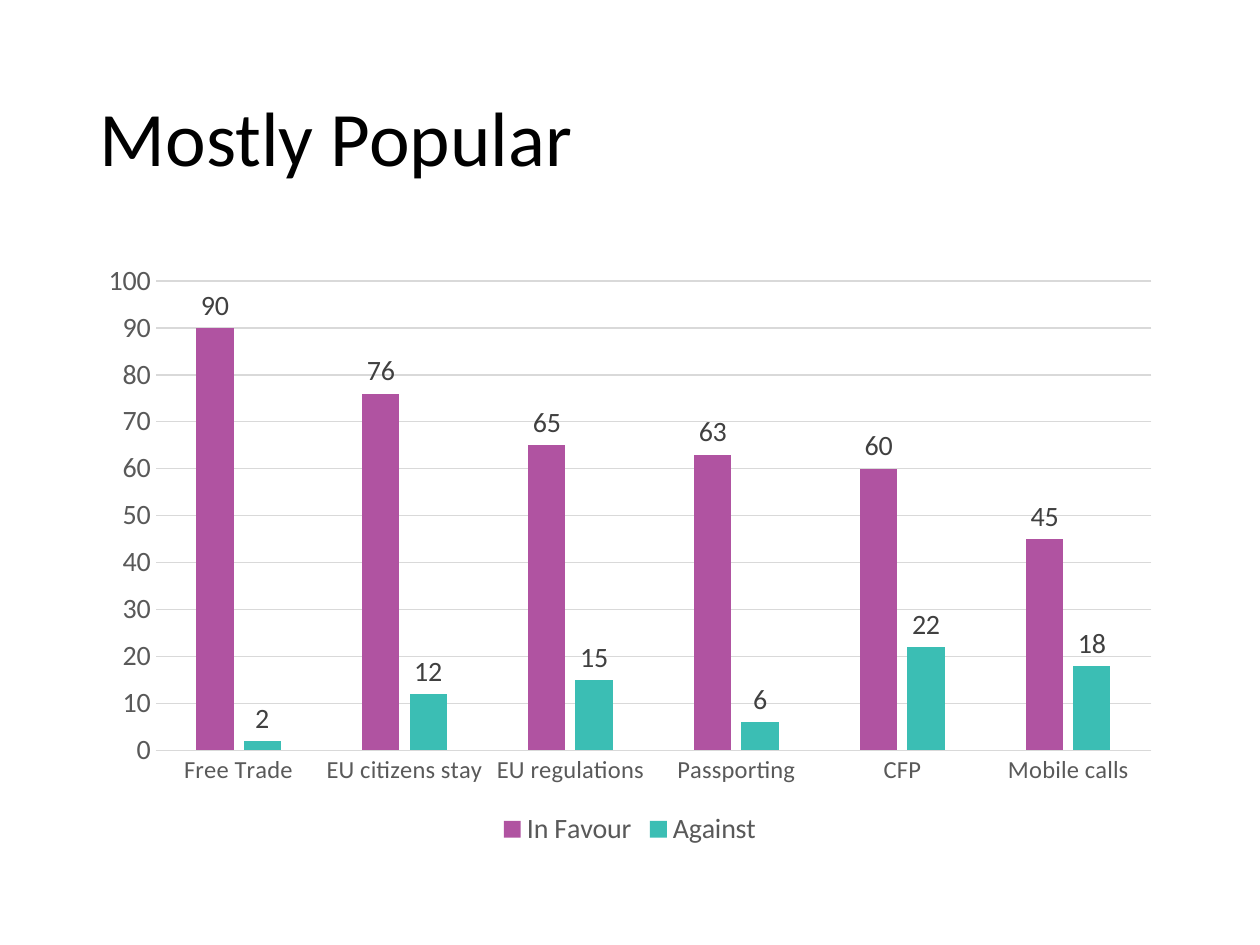
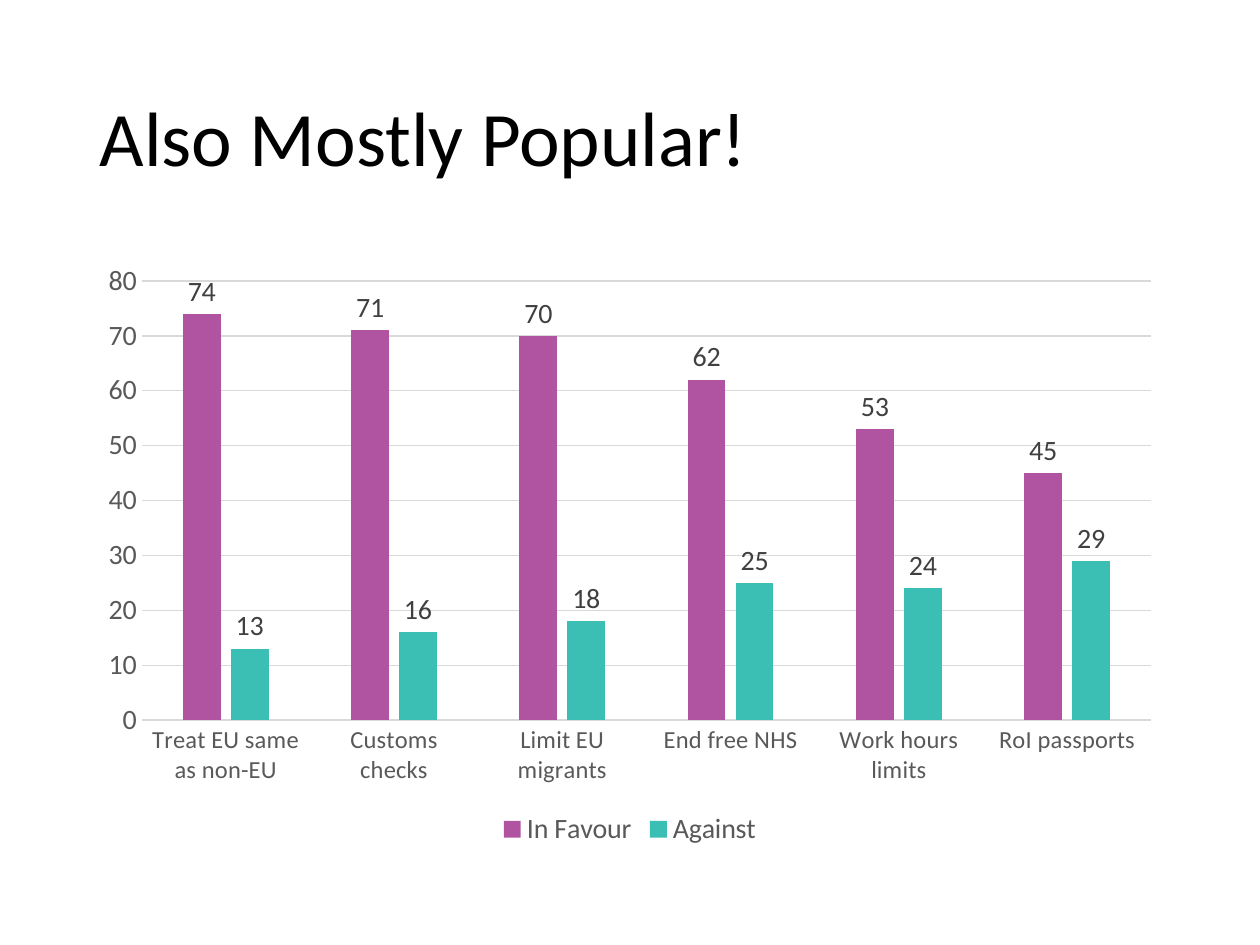
"""Build two slides that each show a title and a clustered column chart."""
from pptx import Presentation
from pptx import util as u
from pptx.chart.data import CategoryChartData
from pptx.dml.color import RGBColor
from pptx.enum import chart as ch, text

SLIDES = [
    {"title": "Mostly Popular",
     "top": 100,
     "rows": [("Free Trade", 90, 2), ("EU citizens stay", 76, 12),
              ("EU regulations", 65, 15), ("Passporting", 63, 6),
              ("CFP", 60, 22), ("Mobile calls", 45, 18)]},
    {"title": "Also Mostly Popular!",
     "top": 80,
     "rows": [("Treat EU same as non-EU", 74, 13), ("Customs checks", 71, 16),
              ("Limit EU migrants", 70, 18), ("End free NHS", 62, 25),
              ("Work hours limits", 53, 24), ("RoI passports", 45, 29)]},
]
SERIES = [("In Favour", "B053A1"), ("Against", "3BBEB4")]
FONT = "Calibri"
BLACK, AXIS_TEXT, LABEL_TEXT, GRID = "000000", "595959", "404040", "D9D9D9"
SLIDE_SIZE = (1260, 945)
TITLE_AREA = (87, 50, 1086, 183)
CHART_AREA = (87, 252, 1086, 600)
PX_PER_INCH = 126


def px(length):
    """Turn pixels into EMU."""
    return u.Emu(round(length * 914400 / PX_PER_INCH))


def color(code):
    """Turn a hex string into a colour."""
    return RGBColor.from_string(code)


def set_font(font, size, code):
    """Apply the shared typeface with a size and colour."""
    font.name = FONT
    font.size = u.Pt(size)
    font.bold = False
    font.color.rgb = color(code)


def set_line(line):
    """Draw a thin grey line."""
    line.width = u.Pt(0.75)
    line.color.rgb = color(GRID)


def add_title(page, wording):
    """Place and format the title."""
    box = page.shapes.title
    box.left, box.top, box.width, box.height = map(px, TITLE_AREA)
    frame = box.text_frame
    frame.text = wording
    frame.vertical_anchor = text.MSO_ANCHOR.MIDDLE
    para = frame.paragraphs[0]
    para.alignment = text.PP_ALIGN.LEFT
    para.line_spacing = 0.9
    set_font(para.runs[0].font, 44, BLACK)


def format_axes(chart, top):
    """Style both axes, with grid lines from the value axis."""
    for axis, size in ((chart.category_axis, 14), (chart.value_axis, 16)):
        axis.major_tick_mark = axis.minor_tick_mark = ch.XL_TICK_MARK.NONE
        set_font(axis.tick_labels.font, size, AXIS_TEXT)
    set_line(chart.category_axis.format.line)
    values = chart.value_axis
    values.minimum_scale, values.maximum_scale, values.major_unit = 0, top, 10
    values.format.line.fill.background()
    values.has_major_gridlines = True
    set_line(values.major_gridlines.format.line)


def format_series(series, code):
    """Colour the columns and show their values above them."""
    series.format.fill.solid()
    series.format.fill.fore_color.rgb = color(code)
    series.invert_if_negative = False
    labels = series.data_labels
    labels.show_value = True
    labels.position = ch.XL_LABEL_POSITION.OUTSIDE_END
    set_font(labels.font, 16, LABEL_TEXT)


def add_column_chart(page, rows, top):
    """Add the clustered columns with their legend."""
    names, *results = zip(*rows)
    data = CategoryChartData()
    data.categories = names
    for (name, _), values in zip(SERIES, results):
        data.add_series(name, values)
    chart = page.shapes.add_chart(
        ch.XL_CHART_TYPE.COLUMN_CLUSTERED, *map(px, CHART_AREA), data).chart
    set_font(chart.font, 10, BLACK)
    chart.has_title = False
    chart.has_legend = True
    chart.legend.position = ch.XL_LEGEND_POSITION.BOTTOM
    chart.legend.include_in_layout = False
    set_font(chart.legend.font, 16, AXIS_TEXT)
    format_axes(chart, top)
    plot = chart.plots[0]
    plot.gap_width, plot.overlap = 219, -27
    plot.vary_by_categories = False
    for series, (_, code) in zip(plot.series, SERIES):
        format_series(series, code)


def main():
    """Build and save the deck."""
    deck = Presentation()
    deck.slide_width, deck.slide_height = map(px, SLIDE_SIZE)
    for content in SLIDES:
        page = deck.slides.add_slide(deck.slide_layouts[5])
        add_title(page, content["title"])
        add_column_chart(page, content["rows"], content["top"])
    deck.save("out.pptx")


if __name__ == "__main__":
    main()
